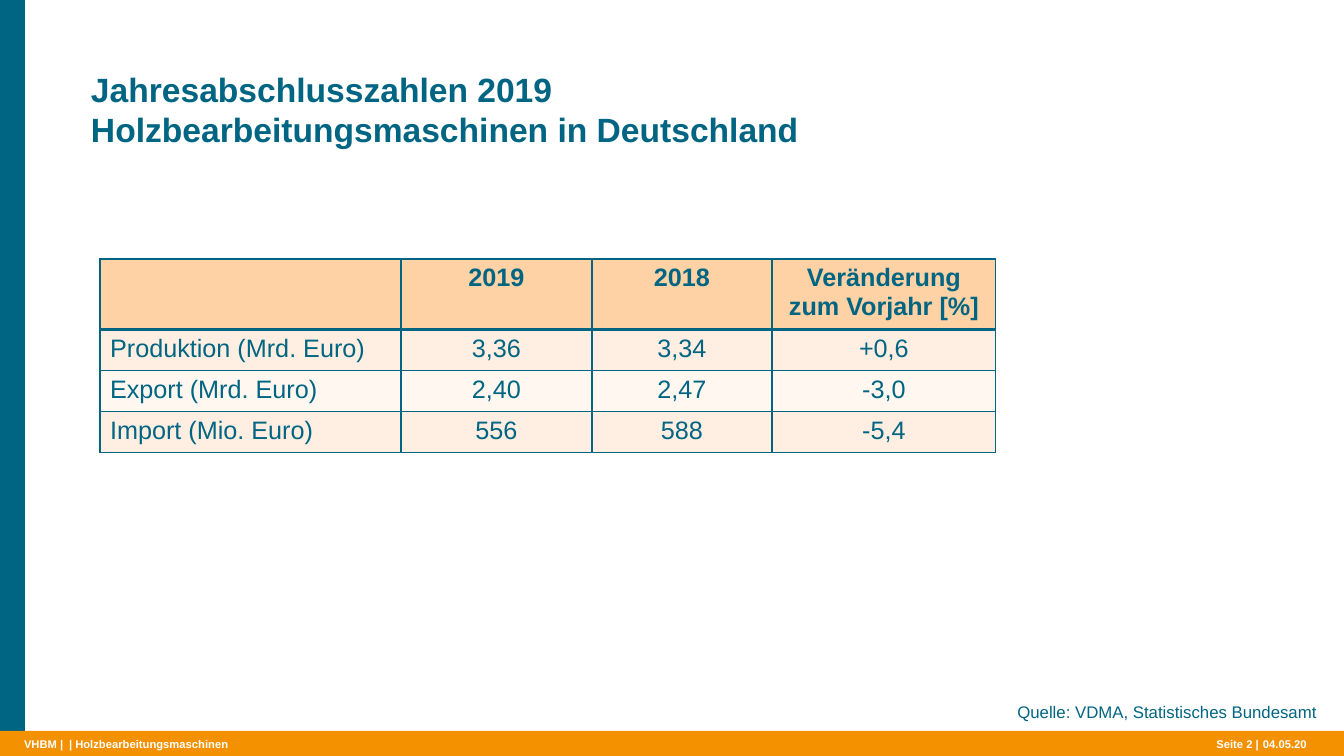
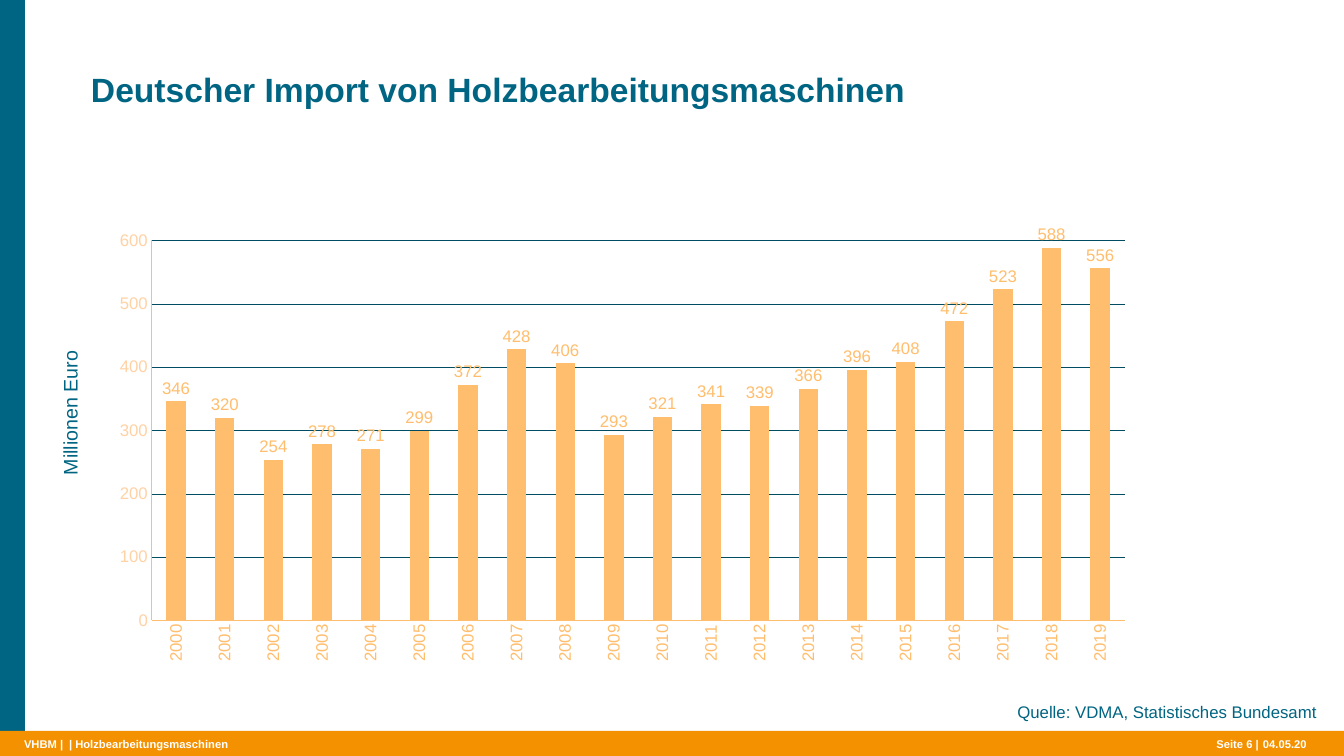
import dataclasses

import lxml.etree
import pptx
import pptx.chart.data
import pptx.dml.color
import pptx.enum.chart
import pptx.enum.shapes
import pptx.enum.text
import pptx.oxml.ns
import pptx.util

ALIGN = pptx.enum.text.PP_ALIGN
ANCHOR = pptx.enum.text.MSO_ANCHOR
qn = pptx.oxml.ns.qn

# Shared look
PX_PER_INCH = 100.8
PAGE_WIDTH, PAGE_HEIGHT = 1344, 756
FONT = "Arial"
TEAL, ORANGE, WHITE = "006582", "F49100", "FFFFFF"
DARK_TEAL, APRICOT, PEACH = "004C62", "FFBE6E", "FFD2A5"
BAND_FILLS = ("FFEEE1", "FFF7F0")
SOURCE = "Quelle: VDMA, Statistisches Bundesamt"


@dataclasses.dataclass(frozen=True)
class Frame:
    left: int
    top: int
    width: int
    height: int

    def emu(self) -> tuple:
        return tuple(px(value) for value in dataclasses.astuple(self))


@dataclasses.dataclass(frozen=True)
class Style:
    size: int
    color: str = TEAL
    bold: bool = False
    align: ALIGN = ALIGN.LEFT
    anchor: ANCHOR = ANCHOR.TOP
    inset: bool = False
    wrap: bool = True
    grow: bool = True


@dataclasses.dataclass(frozen=True)
class Label:
    text: str
    frame: Frame
    style: Style
    rotation: int = 0


TITLE = Style(24, bold=True, grow=False)
FOOTER = Style(8, WHITE, bold=True, anchor=ANCHOR.MIDDLE, wrap=False)
FOOTER_WIDE = dataclasses.replace(FOOTER, wrap=True)
FOOTER_RIGHT = dataclasses.replace(FOOTER, align=ALIGN.RIGHT)
FOOTER_DATE = dataclasses.replace(FOOTER, anchor=ANCHOR.TOP)
SOURCE_NOTE = Style(12, align=ALIGN.RIGHT, inset=True)
AXIS_NOTE = Style(14, align=ALIGN.CENTER, inset=True)

BANDS = (
    (Frame(0, 0, 25, PAGE_HEIGHT), TEAL),
    (Frame(0, 731, PAGE_WIDTH, 25), ORANGE),
)


def px(value: int) -> int:
    return round(value * 914400 / PX_PER_INCH)


def rgb(color: str) -> pptx.dml.color.RGBColor:
    return pptx.dml.color.RGBColor.from_string(color)


def set_font(font, size: int, color: str, bold: bool = False) -> None:
    font.name = FONT
    font.size = pptx.util.Pt(size)
    font.bold = bold
    font.color.rgb = rgb(color)


def set_line(line, color: str, width: float) -> None:
    line.color.rgb = rgb(color)
    line.width = pptx.util.Pt(width)


def add_band(page, frame: Frame, color: str) -> None:
    band = page.shapes.add_shape(
        pptx.enum.shapes.MSO_SHAPE.RECTANGLE, *frame.emu())
    band.shadow.inherit = False
    band.fill.solid()
    band.fill.fore_color.rgb = rgb(color)
    band.line.fill.background()


def add_label(page, label: Label) -> None:
    style = label.style
    box = page.shapes.add_textbox(*label.frame.emu())
    box.rotation = label.rotation
    text = box.text_frame
    text.word_wrap = style.wrap
    text.vertical_anchor = style.anchor
    sizes = pptx.enum.text.MSO_AUTO_SIZE
    text.auto_size = sizes.SHAPE_TO_FIT_TEXT if style.grow else sizes.NONE
    if not style.inset:
        text.margin_left = text.margin_right = 0
        text.margin_top = text.margin_bottom = 0
    para = text.paragraphs[0]
    para.text = label.text
    para.alignment = style.align
    set_font(para.font, style.size, style.color, style.bold)


def add_page(deck, title: str, number: int):
    """Add a page with its bands, title, footer and source note."""
    page = deck.slides.add_slide(deck.slide_layouts[6])
    for frame, color in BANDS:
        add_band(page, frame, color)
    for label in (
        Label("VHBM |", Frame(24, 738, 44, 13), FOOTER),
        Label(title, Frame(91, 69, 1091, 82), TITLE),
        Label("| Holzbearbeitungsmaschinen", Frame(69, 738, 388, 13),
              FOOTER_WIDE),
        Label("04.05.20", Frame(1263, 737, 57, 13), FOOTER_DATE),
        Label(SOURCE, Frame(950, 697, 377, 30), SOURCE_NOTE),
        Label(f"Seite {number} |", Frame(1216, 738, 43, 13), FOOTER_RIGHT),
    ):
        add_label(page, label)
    return page


# Table
FIGURES = (
    ("", "2019", "2018", "Veränderung zum Vorjahr [%]"),
    ("Produktion (Mrd. Euro)", "3,36", "3,34", "+0,6"),
    ("Export (Mrd. Euro)", "2,40", "2,47", "-3,0"),
    ("Import (Mio. Euro)", "556", "588", "-5,4"),
)
COLUMN_WIDTHS = (301, 191, 180, 224)
ROW_HEIGHTS = (70, 41, 41, 41)


def set_borders(cell, top: int, bottom: int) -> None:
    properties = cell._tc.get_or_add_tcPr()
    for side, width in (("L", 1), ("R", 1), ("T", top), ("B", bottom)):
        line = lxml.etree.SubElement(
            properties, qn(f"a:ln{side}"), w=str(pptx.util.Pt(width)))
        fill = lxml.etree.SubElement(line, qn("a:solidFill"))
        lxml.etree.SubElement(fill, qn("a:srgbClr"), val=TEAL)


def add_figures_table(page) -> None:
    frame = Frame(100, 259, sum(COLUMN_WIDTHS), sum(ROW_HEIGHTS))
    table = page.shapes.add_table(
        len(FIGURES), len(COLUMN_WIDTHS), *frame.emu()).table
    table.first_row = table.horz_banding = False
    for column, width in zip(table.columns, COLUMN_WIDTHS):
        column.width = px(width)
    for index, (row, height) in enumerate(zip(table.rows, ROW_HEIGHTS)):
        row.height = px(height)
        header = index == 0
        color = PEACH if header else BAND_FILLS[(index - 1) % 2]
        for position, (cell, text) in enumerate(
                zip(row.cells, FIGURES[index])):
            set_borders(cell, 3 if index == 1 else 1, 3 if header else 1)
            cell.fill.solid()
            cell.fill.fore_color.rgb = rgb(color)
            para = cell.text_frame.paragraphs[0]
            para.text = text
            para.alignment = ALIGN.CENTER if position else ALIGN.LEFT
            set_font(para.font, 18, TEAL, header)


# Chart
FIRST_YEAR = 2000
IMPORTS = (346, 320, 254, 278, 271, 299, 372, 428, 406, 293,
           321, 341, 339, 366, 396, 408, 472, 523, 588, 556)
PLOT_AREA = {"x": 0.04, "y": 0.1, "w": 0.93, "h": 0.8}


def set_plot_area(chart) -> None:
    area = chart._chartSpace.chart.plotArea
    for old in area.findall(qn("c:layout")):
        area.remove(old)
    layout = lxml.etree.Element(qn("c:layout"))
    manual = lxml.etree.SubElement(layout, qn("c:manualLayout"))
    settings = {"layoutTarget": "inner", "xMode": "edge", "yMode": "edge"}
    for name, value in (settings | PLOT_AREA).items():
        lxml.etree.SubElement(manual, qn(f"c:{name}"), val=str(value))
    area.insert(0, layout)


def style_axis(axis, color: str) -> None:
    axis.major_tick_mark = pptx.enum.chart.XL_TICK_MARK.NONE
    axis.minor_tick_mark = pptx.enum.chart.XL_TICK_MARK.NONE
    set_font(axis.tick_labels.font, 12, color)
    set_line(axis.format.line, APRICOT, 0.75)


def add_import_chart(page) -> None:
    data = pptx.chart.data.CategoryChartData()
    data.categories = [str(FIRST_YEAR + step) for step in range(len(IMPORTS))]
    data.add_series("Import", IMPORTS)
    chart = page.shapes.add_chart(
        pptx.enum.chart.XL_CHART_TYPE.COLUMN_CLUSTERED,
        *Frame(110, 193, 1046, 475).emu(), data).chart
    chart.has_legend = chart.has_title = False
    set_font(chart.font, 12, ORANGE)
    set_plot_area(chart)

    style_axis(chart.category_axis, APRICOT)
    years = chart.category_axis._element.find(qn("c:txPr"))
    years.find(qn("a:bodyPr")).set("rot", "-5400000")

    values = chart.value_axis
    style_axis(values, PEACH)
    values.minimum_scale, values.maximum_scale = 0, 600
    values.major_unit = 100
    values.tick_labels.number_format = "0"
    values.tick_labels.number_format_is_linked = False
    values.has_major_gridlines = True
    set_line(values.major_gridlines.format.line, DARK_TEAL, 0.25)

    plot = chart.plots[0]
    plot.gap_width = 150
    plot.vary_by_categories = False
    series = plot.series[0]
    series.format.fill.solid()
    series.format.fill.fore_color.rgb = rgb(APRICOT)
    labels = series.data_labels
    labels.show_value = True
    labels.number_format = "#,##0"
    labels.number_format_is_linked = False
    labels.position = pptx.enum.chart.XL_LABEL_POSITION.OUTSIDE_END
    set_font(labels.font, 12, APRICOT)


def main() -> None:
    deck = pptx.Presentation()
    deck.slide_width, deck.slide_height = px(PAGE_WIDTH), px(PAGE_HEIGHT)

    # Annual figures
    page = add_page(deck, "Jahresabschlusszahlen 2019\v"
                    "Holzbearbeitungsmaschinen in Deutschland", 2)
    add_figures_table(page)

    # Imports by year
    page = add_page(deck, "Deutscher Import von Holzbearbeitungsmaschinen", 6)
    add_label(page, Label("Millionen Euro", Frame(-21, 396, 182, 34),
                          AXIS_NOTE, rotation=270))
    add_import_chart(page)

    deck.save("out.pptx")


if __name__ == "__main__":
    main()
